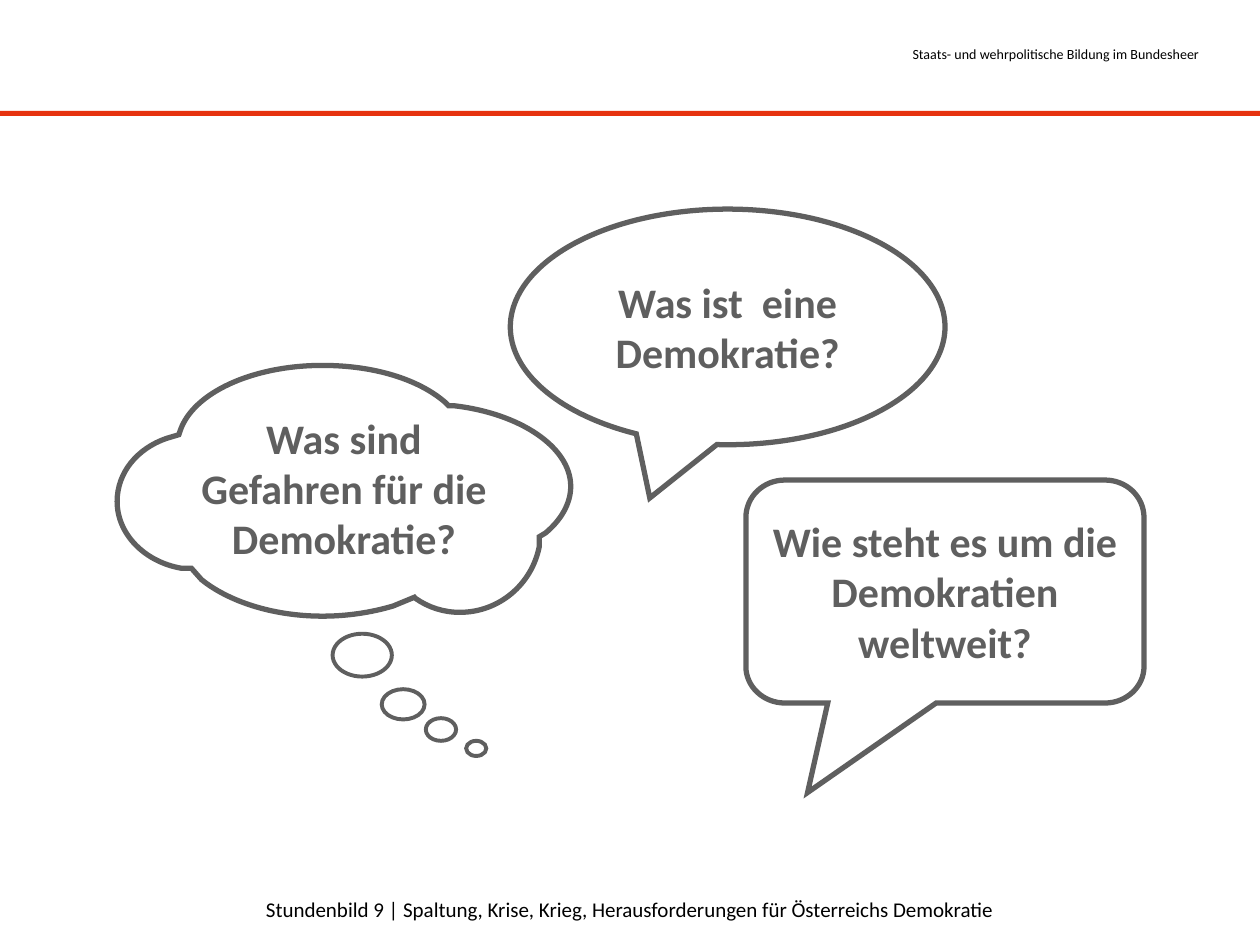
import pptx
import pptx.util
import pptx.dml.color
import pptx.enum.shapes
import pptx.enum.text
import pptx.oxml.ns
import lxml.etree

Inches, Pt = pptx.util.Inches, pptx.util.Pt
RGB = pptx.dml.color.RGBColor.from_string
MSO = pptx.enum.shapes.MSO_SHAPE
ALIGN = pptx.enum.text.PP_ALIGN
ANCHOR = pptx.enum.text.MSO_ANCHOR
qn = pptx.oxml.ns.qn

THEME = {
    "font": "Calibri",
    "black": RGB("000000"), "white": RGB("FFFFFF"),
    "gray": RGB("5F5F5F"), "red": RGB("E6320F"),
    "header": Pt(8), "footer": Pt(12), "question": Pt(24),
    "bubble_line": Pt(3), "dot_line": Pt(2.25),
}


def write(sp, lines, size, color, align, anchor, bold=False, top=0.05):
    tf = sp.text_frame
    frame = {"word_wrap": True, "vertical_anchor": anchor,
             "margin_left": Inches(0.1), "margin_right": Inches(0.1),
             "margin_top": Inches(top), "margin_bottom": Inches(0.05)}
    for name, value in frame.items():
        setattr(tf, name, value)
    for i, line in enumerate(lines):
        p = tf.paragraphs[0] if i == 0 else tf.add_paragraph()
        p.alignment = align
        r = p.add_run()
        r.text = line
        r.font.color.rgb = color
        for name, value in {"name": THEME["font"], "size": size, "bold": bold}.items():
            setattr(r.font, name, value)


def outline(start, segments):
    """Closed shape; a segment is a line end (x, y) or a cubic curve (6 numbers)."""
    builder = s.shapes.build_freeform(*map(Inches, start), scale=1.0)
    builder.add_line_segments([tuple(map(Inches, seg[-2:])) for seg in segments], close=True)
    sp = builder.convert_to_shape()
    sp.fill.background()
    # Turn the straight steps that have control points into curves
    for step, seg in zip(list(sp._element.iter(qn("a:lnTo"))), segments):
        if len(seg) == 6:
            step.tag = qn("a:cubicBezTo")
            for i in (0, 2):
                pt = lxml.etree.Element(qn("a:pt"), x=str(Inches(seg[i]) - sp.left),
                                        y=str(Inches(seg[i + 1]) - sp.top))
                step.insert(i // 2, pt)
    return sp


prs = pptx.Presentation()
prs.slide_width, prs.slide_height = Inches(10), Inches(7.5)
s = prs.slides.add_slide(prs.slide_layouts[6])

# Footer and header
for box, text, size, align in [
    ((1.58, 7.07, 6.84, 0.3),
     "Stundenbild 9 | Spaltung, Krise, Krieg, Herausforderungen für Österreichs Demokratie",
     THEME["footer"], ALIGN.CENTER),
    ((5.52, 0.31, 4.1, 0.24), "Staats- und wehrpolitische Bildung im Bundesheer",
     THEME["header"], ALIGN.RIGHT),
]:
    sp = s.shapes.add_textbox(*map(Inches, box))
    write(sp, [text], size, THEME["black"], align, ANCHOR.TOP)

# Red rule
sp = s.shapes.add_shape(MSO.RECTANGLE, 0, Inches(0.88), prs.slide_width, Inches(0.04))
sp.shadow.inherit = False
sp.fill.solid()
sp.fill.fore_color.rgb = THEME["red"]
sp.line.fill.background()

# Thought dots below the cloud
dots = []
for box in [(2.64, 5.03, 0.47, 0.34), (3.03, 5.47, 0.34, 0.24),
            (3.38, 5.7, 0.24, 0.18), (3.7, 5.88, 0.16, 0.12)]:
    dots.append(s.shapes.add_shape(MSO.OVAL, *map(Inches, box)))

# Thought cloud
cloud = outline((2.56, 2.9), [
    (2.97, 2.9, 3.32, 3.01, 3.53, 3.19), (3.56, 3.22), (3.6, 3.22),
    (4.13, 3.28, 4.53, 3.55, 4.53, 3.86), (4.53, 4, 4.45, 4.13, 4.33, 4.23),
    (4.28, 4.26), (4.28, 4.34),
    (4.22, 4.64, 3.96, 4.86, 3.65, 4.86), (3.52, 4.86, 3.4, 4.82, 3.3, 4.75),
    (3.29, 4.74), (3.12, 4.81),
    (2.95, 4.86, 2.76, 4.89, 2.56, 4.89), (2.16, 4.89, 1.81, 4.77, 1.6, 4.6),
    (1.52, 4.51), (1.44, 4.51),
    (1.15, 4.46, 0.93, 4.24, 0.93, 3.98), (0.93, 3.75, 1.09, 3.56, 1.32, 3.48),
    (1.42, 3.45), (1.43, 3.42), (1.53, 3.12, 2, 2.9, 2.56, 2.9),
])

# Rounded speech bubble
rounded = outline((6.23, 3.81), [
    (8.77, 3.81), (8.94, 3.81, 9.08, 3.94, 9.08, 4.11),
    (9.08, 5.29), (9.08, 5.45, 8.94, 5.58, 8.77, 5.58),
    (7.43, 5.58), (6.41, 6.29), (6.57, 5.58),
    (6.23, 5.58), (6.06, 5.58, 5.92, 5.45, 5.92, 5.29),
    (5.92, 4.11), (5.92, 3.94, 6.06, 3.81, 6.23, 3.81),
])

# Oval speech bubble
oval = s.shapes.add_shape(MSO.OVAL_CALLOUT, *map(Inches, (4.05, 1.66, 3.45, 1.87)))
oval.adjustments[0], oval.adjustments[1] = -0.179, 0.726

# Shared bubble look, with sharp corners
for sp in dots + [oval]:
    sp.fill.solid()
    sp.fill.fore_color.rgb = THEME["white"]
for sp in dots + [cloud, rounded, oval]:
    sp.shadow.inherit = False
    sp.line.color.rgb = THEME["gray"]
    sp.line.width = THEME["dot_line"] if sp in dots else THEME["bubble_line"]
    ln = next(sp._element.iter(qn("a:ln")))
    lxml.etree.SubElement(ln, qn("a:miter"), lim="800000")

# Questions
for sp, lines, anchor, top in [
    (cloud, ["Was sind", "Gefahren für die Demokratie?"], ANCHOR.MIDDLE, 0),
    (rounded, ["Wie steht es um die Demokratien weltweit?"], ANCHOR.TOP, 0.28),
    (oval, ["Was ist  eine Demokratie?"], ANCHOR.MIDDLE, 0.05),
]:
    write(sp, lines, THEME["question"], THEME["gray"], ALIGN.CENTER, anchor, True, top)

prs.save("out.pptx")
